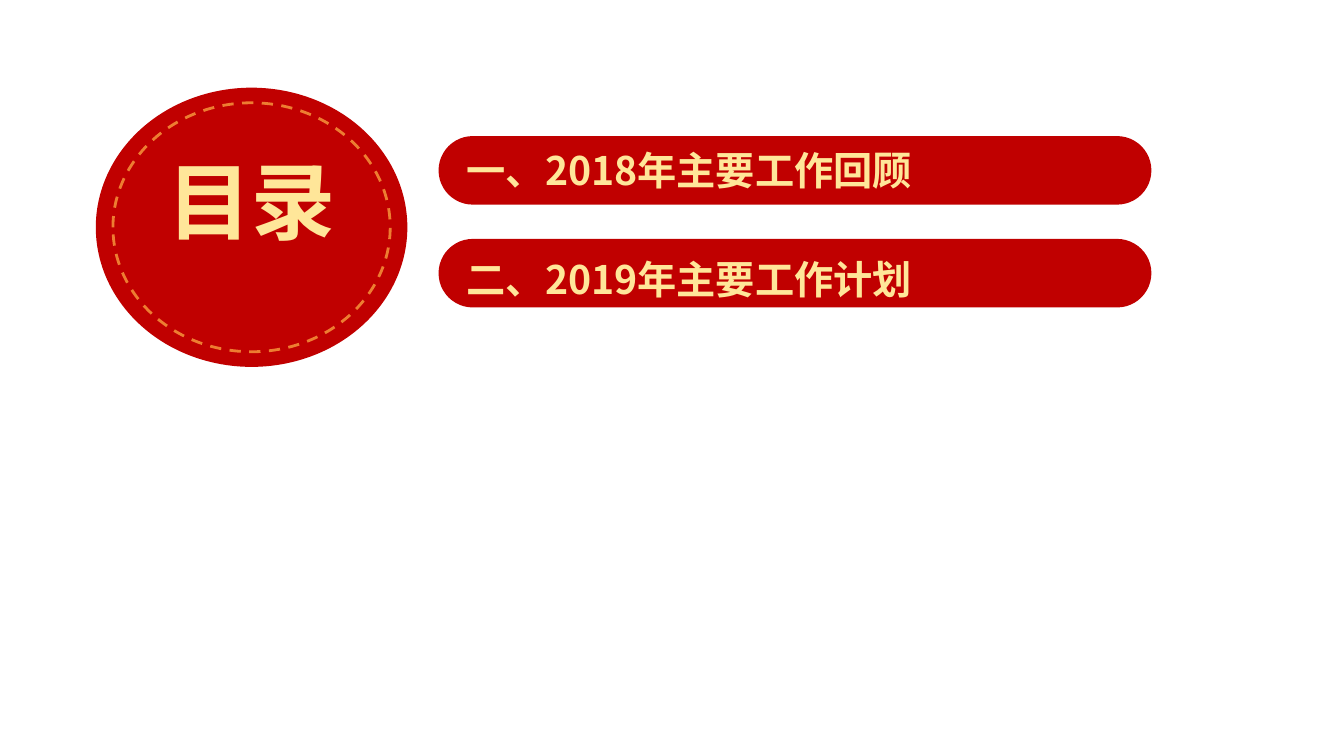
import pptx
import pptx.dml.color
import pptx.enum.dml
import pptx.enum.shapes
import pptx.enum.text
import pptx.oxml
import pptx.oxml.ns
import pptx.util

Inches = pptx.util.Inches
RED = pptx.dml.color.RGBColor(0xC0, 0x00, 0x00)
ORANGE = pptx.dml.color.RGBColor(0xED, 0x7D, 0x31)
GOLD = pptx.dml.color.RGBColor(0xFF, 0xE6, 0x99)
SHAPES = pptx.enum.shapes.MSO_SHAPE
ALIGN = pptx.enum.text.PP_ALIGN


class AgendaPage:
    font_name = "Noto Sans CJK SC"

    def __init__(self, page):
        self.page = page

    def shape(self, kind, left, top, width, height, fill=None, line=None):
        shape = self.page.shapes.add_shape(
            kind, Inches(left), Inches(top), Inches(width), Inches(height))
        shape.shadow.inherit = False
        if fill is None:
            shape.fill.background()
        else:
            shape.fill.solid()
            shape.fill.fore_color.rgb = fill
        if line is None:
            shape.line.fill.background()
        else:
            shape.line.color.rgb = line
            shape.line.width = pptx.util.Pt(2)
            shape.line.dash_style = pptx.enum.dml.MSO_LINE.DASH
        return shape

    def bar(self, left, top, width, height):
        bar = self.shape(SHAPES.ROUNDED_RECTANGLE, left, top, width, height, fill=RED)
        bar.adjustments[0] = 0.5

    def text(self, box, words, left, top, width, height, size, align):
        box.left, box.top = Inches(left), Inches(top)
        box.width, box.height = Inches(width), Inches(height)
        self.page.shapes.element.append(box.element)
        frame = box.text_frame
        frame.text = words
        frame.word_wrap = True
        frame.auto_size = pptx.enum.text.MSO_AUTO_SIZE.NONE
        frame.vertical_anchor = pptx.enum.text.MSO_ANCHOR.MIDDLE
        para = frame.paragraphs[0]
        para.alignment = align
        para.space_before = pptx.util.Pt(0)
        properties = para._p.get_or_add_pPr()
        properties.set("marL", "0")
        properties.set("indent", "0")
        properties.append(pptx.oxml.parse_xml(
            f"<a:buNone {pptx.oxml.ns.nsdecls('a')}/>"))
        span = para.runs[0]
        span.font.size = pptx.util.Pt(size)
        span.font.bold = True
        span.font.color.rgb = GOLD
        span.font.name = self.font_name
        span.font._element.append(pptx.oxml.parse_xml(
            f'<a:ea {pptx.oxml.ns.nsdecls("a")} typeface="{self.font_name}"/>'))


def main():
    deck = pptx.Presentation()
    deck.slide_width, deck.slide_height = Inches(13.33), Inches(7.5)
    page = deck.slides.add_slide(deck.slide_layouts.get_by_name("Two Content"))
    for extra in list(page.placeholders)[3:]:
        extra.element.getparent().remove(extra.element)
    title, *item_boxes = page.placeholders
    agenda = AgendaPage(page)

    agenda.shape(SHAPES.OVAL, 0.95, 0.87, 3.09, 2.77, fill=RED)
    agenda.shape(SHAPES.OVAL, 1.12, 1.02, 2.75, 2.47, line=ORANGE)
    agenda.text(title, "目录", 1.29, 1.43, 2.41, 1.11, 60, ALIGN.CENTER)

    items = [("一、2018年主要工作回顾", 1.4), ("二、2019年主要工作计划", 2.48)]
    for index, (box, (words, text_top)) in enumerate(zip(item_boxes, items)):
        agenda.bar(4.35, 1.35 + 1.02 * index, 7.07, 0.68)
        agenda.text(box, words, 4.53, text_top, 6.89, 0.57, 28, ALIGN.LEFT)

    deck.save("out.pptx")


if __name__ == "__main__":
    main()
